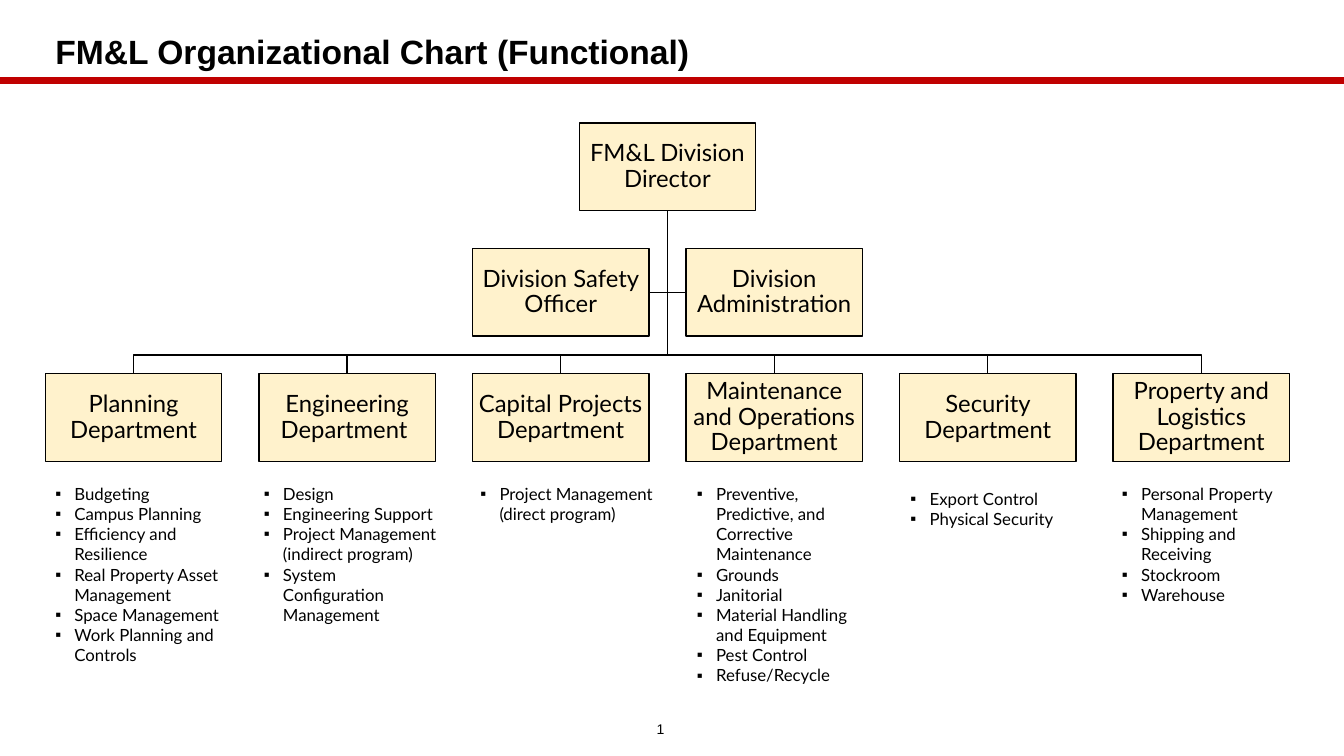
from lxml.etree import SubElement
from pptx import Presentation
from pptx.dml.color import RGBColor
from pptx.enum.shapes import MSO_CONNECTOR, MSO_SHAPE
from pptx.enum.text import MSO_ANCHOR, MSO_AUTO_SIZE, PP_ALIGN
from pptx.oxml.ns import qn
from pptx.util import Inches, Pt

BLACK = RGBColor(0, 0, 0)
RED = RGBColor(0xC0, 0, 0)
CREAM = RGBColor(0xFF, 0xF2, 0xCC)

WIDE, HIGH = 13.33, 7.5
LEFT, TOP = 0.45, 1.22
BOX_W, BOX_H = 1.75, 0.87
COL, ROW = 2.118, 1.244
INDENT = 0.19

UNITS = [
    ("Planning Department", (0, 0, 1.9), [
        "Budgeting", "Campus Planning", "Efficiency and Resilience",
        "Real Property Asset Management", "Space Management",
        "Work Planning and Controls"]),
    ("Engineering Department ", (-0.05, 0, 1.92), [
        "Design", "Engineering Support",
        "Project Management (indirect program)",
        "System Configuration Management"]),
    ("Capital Projects Department", (-0.02, 0, 1.94), [
        "Project Management (direct program)"]),
    ("Maintenance and Operations Department", (0.01, 0, 1.95), [
        "Preventive, Predictive, and Corrective Maintenance", "Grounds",
        "Janitorial", "Material Handling and Equipment", "Pest Control",
        "Refuse/Recycle"]),
    ("Security Department", (0.01, 0.05, 1.76), [
        "Export Control", "Physical Security"]),
    ("Property and Logistics Department", (-0.01, 0, 1.76), [
        "Personal Property Management", "Shipping and Receiving",
        "Stockroom", "Warehouse"]),
]


def write(shape, lines, size=12, font="Lato", bold=False, align=PP_ALIGN.LEFT,
          anchor=MSO_ANCHOR.MIDDLE, space=None, inset=None, bullet=None):
    frame = shape.text_frame
    frame.word_wrap = True
    frame.vertical_anchor = anchor
    if inset is not None:
        frame.margin_left = frame.margin_right = Inches(inset)
        frame.margin_top = frame.margin_bottom = Inches(inset)
    for n, line in enumerate(lines):
        para = frame.add_paragraph() if n else frame.paragraphs[0]
        para.alignment = align
        if space:
            para.line_spacing = space
        if bullet:
            props = para._p.get_or_add_pPr()
            props.set("marL", str(Inches(INDENT)))
            props.set("indent", str(-Inches(INDENT)))
            SubElement(props, qn("a:buFont"), typeface="Arial")
            SubElement(props, qn("a:buChar"), char=bullet)
        run = para.add_run()
        run.text = line
        run.font.size = Pt(size)
        run.font.name = font
        run.font.bold = bold
        run.font.color.rgb = BLACK
    return frame


def place(slide, x, y, w, h):
    return slide.shapes.add_textbox(*map(Inches, (x, y, w, h)))


def draw_head(slide, x, y, w, h):
    rule = slide.shapes.add_connector(
        MSO_CONNECTOR.STRAIGHT, 0, Inches(y + h), Inches(WIDE), Inches(y + h))
    rule.line.color.rgb = RED
    rule.line.width = Pt(4.5)
    SubElement(rule._element.spPr, qn("a:effectLst"))
    write(place(slide, x, y, w, h), ["FM&L Organizational Chart (Functional)"],
          size=24, font="Arial", bold=True, space=0.9)


def draw_link(slide, *points):
    start, *rest = [(Inches(x), Inches(y)) for x, y in points]
    path = slide.shapes.build_freeform(*start)
    path.add_line_segments(rest, close=False)
    link = path.convert_to_shape()
    link.shadow.inherit = False
    link.fill.background()
    link.line.color.rgb = BLACK
    link.line.width = Pt(1)


def draw_box(slide, x, y, label):
    box = slide.shapes.add_shape(
        MSO_SHAPE.RECTANGLE, *map(Inches, (x, y, BOX_W, BOX_H)))
    box.shadow.inherit = False
    box.fill.solid()
    box.fill.fore_color.rgb = CREAM
    box.line.color.rgb = BLACK
    box.line.width = Pt(1)
    write(box, [label], size=17, align=PP_ALIGN.CENTER, space=0.9, inset=0.01)


def draw_tree(slide, x, y):
    mid = x + 2.5 * COL + BOX_W / 2
    base = y + BOX_H
    aides, units = y + ROW, y + 2 * ROW
    bus = (aides + BOX_H + units) / 2
    level = aides + BOX_H / 2
    for edge in (x + 2 * COL + BOX_W, x + 3 * COL):
        draw_link(slide, (mid, base), (mid, level), (edge, level))
    for n in range(len(UNITS)):
        stem = x + n * COL + BOX_W / 2
        draw_link(slide, (mid, base), (mid, bus), (stem, bus), (stem, units))

    draw_box(slide, x + 2.5 * COL, y, "FM&L Division Director")
    draw_box(slide, x + 2 * COL, aides, "Division Safety Officer")
    draw_box(slide, x + 3 * COL, aides, "Division Administration")
    for n, (label, _, _) in enumerate(UNITS):
        draw_box(slide, x + n * COL, units, label)


def draw_lists(slide, x, y, h):
    for n, (_, (right, down, w), tasks) in enumerate(UNITS):
        area = place(slide, x + n * COL + right, y + down, w, h)
        frame = write(area, tasks, anchor=MSO_ANCHOR.TOP, bullet="▪")
        frame.auto_size = MSO_AUTO_SIZE.SHAPE_TO_FIT_TEXT
        rows = len(tasks) + sum(len(task) // 21 for task in tasks)
        area.height = Inches(0.1 + 0.2 * rows)


def main():
    deck = Presentation()
    deck.slide_width, deck.slide_height = Inches(WIDE), Inches(HIGH)
    slide = deck.slides.add_slide(deck.slide_layouts[6])
    draw_head(slide, LEFT, 0.26, WIDE - 2.2 * LEFT, 0.54)
    draw_tree(slide, LEFT, TOP)
    write(place(slide, 6.16, 7.07, 0.78, 0.33), ["1"], size=10, font="Arial",
          align=PP_ALIGN.CENTER)
    draw_lists(slide, LEFT, 4.75, 2)
    deck.save("out.pptx")


if __name__ == "__main__":
    main()
